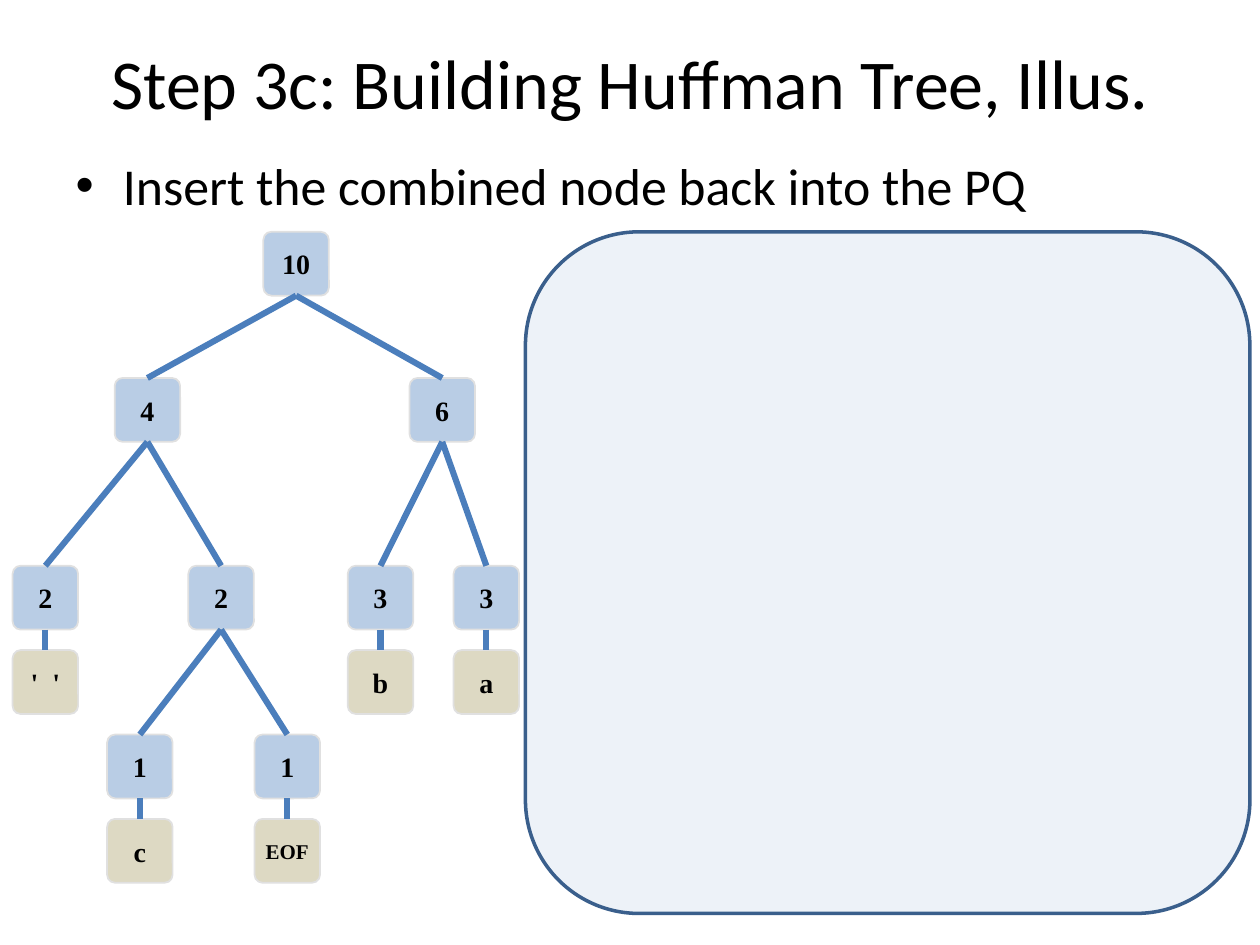
"""Build a slide showing a Huffman tree beside an empty priority queue."""
from dataclasses import dataclass
from typing import Optional

from lxml.etree import SubElement
from pptx import Presentation
from pptx.dml.color import RGBColor
from pptx.enum.shapes import MSO_CONNECTOR as CONN, MSO_SHAPE as SHAPE
from pptx.enum.text import MSO_ANCHOR as ANCHOR, MSO_AUTO_SIZE as FIT, PP_ALIGN as ALIGN
from pptx.oxml.ns import qn
from pptx.util import Inches, Pt

BLACK = RGBColor(0x00, 0x00, 0x00)
NODE_FILL = RGBColor(0xB9, 0xCD, 0xE5)
LEAF_FILL = RGBColor(0xDD, 0xD9, 0xC3)
NODE_LINE = RGBColor(0xE0, 0xE0, 0xE0)
LINK = RGBColor(0x4B, 0x7E, 0xBC)
QUEUE_FILL = RGBColor(0x4F, 0x81, 0xBD)
QUEUE_LINE = RGBColor(0x3A, 0x5F, 0x8C)

WIDTH, HEIGHT = Inches(10), Inches(7.5)
BOX_W, BOX_H = 5.2, 6.76
LEVELS = (24.53, 40, 59.87, 77.73)
LEAF_DROP = 8.93


@dataclass(frozen=True)
class Node:
    """Tree node with its count, centre in percent of the width, and branches."""
    count: int
    x: float
    symbol: Optional[str] = None
    size: int = 16
    children: tuple["Node", ...] = ()


TREE = Node(10, 23.5, children=(
    Node(4, 11.7, children=(
        Node(2, 3.6, "'  '"),
        Node(2, 17.55, children=(
            Node(1, 11.1, "c"),
            Node(1, 22.8, "EOF", 12))))),
    Node(6, 35.1, children=(
        Node(3, 30.2, "b"),
        Node(3, 38.6, "a")))))


def place(x: float, y: float, w: float, h: float) -> tuple[int, ...]:
    """Turn percentages of the slide into lengths."""
    return tuple(int(share * full / 100)
                 for share, full in zip((x, y, w, h), (WIDTH, HEIGHT) * 2))


def set_all(obj, values: dict) -> None:
    """Set every named attribute on an object."""
    for name, value in values.items():
        setattr(obj, name, value)


def write(sp, text: str, font: dict, frame: dict, align: Optional[ALIGN] = None) -> None:
    """Write one formatted paragraph into a shape."""
    tf = sp.text_frame
    set_all(tf, frame)
    p = tf.paragraphs[0]
    p.alignment = align
    r = p.add_run()
    r.text = text
    set_all(r.font, font)
    r.font.color.rgb = BLACK


def add_round(slide, box: tuple, fill: RGBColor, line: RGBColor, weight: float):
    """Add a flat rounded rectangle."""
    sp = slide.shapes.add_shape(SHAPE.ROUNDED_RECTANGLE, *place(*box))
    sp.shadow.inherit = False
    sp.fill.solid()
    sp.fill.fore_color.rgb = fill
    sp.line.color.rgb = line
    sp.line.width = Pt(weight)
    return sp


def add_box(slide, x: float, y: float, text: str, fill: RGBColor, size: int = 16):
    """Add a labelled tree box centred on x."""
    sp = add_round(slide, (x - BOX_W / 2, y, BOX_W, BOX_H), fill, NODE_LINE, 1)
    sp.adjustments[0] = 0.126
    write(sp, text, {"name": "Times New Roman", "size": Pt(size), "bold": True},
          {"word_wrap": False, "vertical_anchor": ANCHOR.MIDDLE}, ALIGN.CENTER)
    return sp


def add_link(slide, parent, child) -> None:
    """Join the bottom of a parent to the top of a child."""
    line = slide.shapes.add_connector(CONN.STRAIGHT, 0, 0, 0, 0)
    line.begin_connect(parent, 2)
    line.end_connect(child, 0)
    line.line.color.rgb = LINK
    line.line.width = Pt(3.5)
    SubElement(line._element.spPr, qn("a:effectLst"))


def add_tree(slide, node: Node, level: int = 0):
    """Add a node with everything below it and return its box."""
    below = [add_tree(slide, child, level + 1) for child in node.children]
    y = LEVELS[level]
    sp = add_box(slide, node.x, y, str(node.count), NODE_FILL)
    if node.symbol:
        below.append(add_box(slide, node.x, y + LEAF_DROP, node.symbol, LEAF_FILL, node.size))
    for child in below:
        add_link(slide, sp, child)
    return sp


def fill_placeholder(sp, box: tuple, text: str, size: float, frame: dict,
                     align: Optional[ALIGN] = None) -> None:
    """Move a placeholder and write its text."""
    set_all(sp, dict(zip(("left", "top", "width", "height"), place(*box))))
    write(sp, text, {"name": "Calibri", "size": Pt(size)},
          {"auto_size": FIT.NONE, "word_wrap": True, **frame}, align)


def main() -> None:
    """Build and save the slide."""
    prs = Presentation()
    prs.slide_width, prs.slide_height = WIDTH, HEIGHT
    slide = prs.slides.add_slide(prs.slide_layouts[1])
    queue = add_round(slide, (41.7, LEVELS[0], 57.5, 72.13), QUEUE_FILL, QUEUE_LINE, 2)
    color = queue.fill._xPr.find(qn("a:solidFill"))[0]
    SubElement(color, qn("a:alpha"), val="10000")
    title, body = slide.placeholders
    fill_placeholder(title, (5, 4, 90, 9.33), "Step 3c: Building Huffman Tree, Illus.", 40,
                     {"vertical_anchor": ANCHOR.MIDDLE}, ALIGN.CENTER)
    fill_placeholder(body, (5, 15.6, 90, 6.67), "Insert the combined node back into the PQ", 29.6,
                     {"vertical_anchor": ANCHOR.TOP})
    add_tree(slide, TREE)
    prs.save("out.pptx")


if __name__ == "__main__":
    main()
